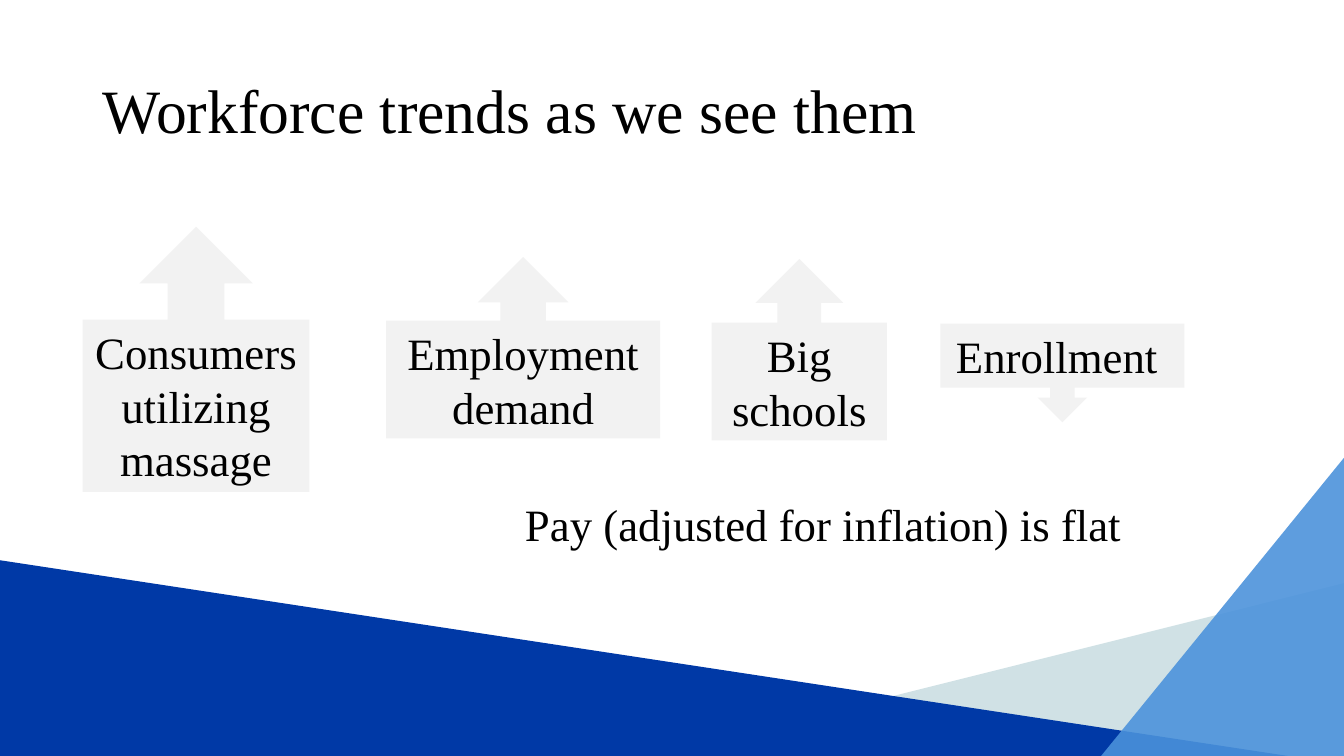
from lxml.etree import SubElement
from pptx import Presentation
from pptx.dml.color import RGBColor
from pptx.enum.shapes import MSO_SHAPE
from pptx.enum.text import MSO_ANCHOR, MSO_AUTO_SIZE, PP_ALIGN
from pptx.oxml.ns import qn
from pptx.util import Pt

WIDTH, HEIGHT = 960, 540
FONT = "Times New Roman"
COLOURS = {
    "text": "000000",
    "callout": "F2F2F2",
    "paper": "FFFFFF",
    "mist": "BED6DB",
    "navy": "0039A6",
    "sky": "4B92DB",
}
TITLE = ("Workforce trends as we see them", (66.24, 28.8, 828, 104.4))
TRIANGLES = [
    ("mist", 72, [(467, HEIGHT), (WIDTH, 416.5), (WIDTH, HEIGHT)]),
    ("navy", 100, [(0, 400.2), (920, HEIGHT), (0, HEIGHT)]),
    ("sky", 89, [(WIDTH, 327), (WIDTH, HEIGHT), (786.5, HEIGHT)]),
]
UP, DOWN, RIGHT = (
    MSO_SHAPE.UP_ARROW_CALLOUT,
    MSO_SHAPE.DOWN_ARROW_CALLOUT,
    MSO_SHAPE.RIGHT_ARROW_CALLOUT,
)
CENTER, LEFT = PP_ALIGN.CENTER, PP_ALIGN.LEFT
TRENDS = [
    (UP, (59.04, 162, 162, 189.36), "callout", CENTER, ["Consumers utilizing massage"], []),
    (UP, (275.76, 183.6, 195.84, 129.6), "callout", CENTER, ["Employment", "demand"], []),
    (UP, (508.32, 185.04, 125.28, 129.6), "callout", CENTER, ["Big schools"], []),
    (DOWN, (671.76, 231.12, 174.24, 70.56), "callout", CENTER, ["Enrollment "], []),
    (RIGHT, (367.92, 351.36, 503.28, 46.08), "paper", LEFT,
     ["Pay (adjusted for inflation) is flat"], [0.445, 0.415, 0.25, 0.922]),
]


def colour(name):
    return RGBColor.from_string(COLOURS[name])


def paint(shape, name, opacity=100):
    shape.shadow.inherit = False
    shape.fill.solid()
    shape.fill.fore_color.rgb = colour(name)
    shape.line.fill.background()
    if opacity < 100:
        tint = shape.fill._xPr.find(".//" + qn("a:srgbClr"))
        SubElement(tint, qn("a:alpha"), val=str(opacity * 1000))


def write(shape, lines, size, alignment, anchor):
    frame = shape.text_frame
    frame.text = "\n".join(lines)
    frame.word_wrap = True
    frame.auto_size = MSO_AUTO_SIZE.NONE
    frame.vertical_anchor = anchor
    for para in frame.paragraphs:
        para.alignment = alignment
        para.font.name = FONT
        para.font.size = Pt(size)
        para.font.color.rgb = colour("text")


def main():
    deck = Presentation()
    deck.slide_width, deck.slide_height = Pt(WIDTH), Pt(HEIGHT)
    page = deck.slides.add_slide(deck.slide_layouts[5])

    for name, opacity, corners in TRIANGLES:
        points = [(Pt(x), Pt(y)) for x, y in corners]
        builder = page.shapes.build_freeform(*points[0])
        builder.add_line_segments(points[1:])
        paint(builder.convert_to_shape(), name, opacity)

    words, place = TITLE
    title = page.shapes.title
    title.left, title.top, title.width, title.height = map(Pt, place)
    write(title, [words], 44, LEFT, MSO_ANCHOR.MIDDLE)
    title.text_frame.paragraphs[0].line_spacing = 0.9

    for kind, place, fill, alignment, lines, adjustments in TRENDS:
        callout = page.shapes.add_shape(kind, *map(Pt, place))
        for index, value in enumerate(adjustments):
            callout.adjustments[index] = value
        paint(callout, fill)
        write(callout, lines, 32, alignment, MSO_ANCHOR.TOP)

    deck.save("out.pptx")


if __name__ == "__main__":
    main()
